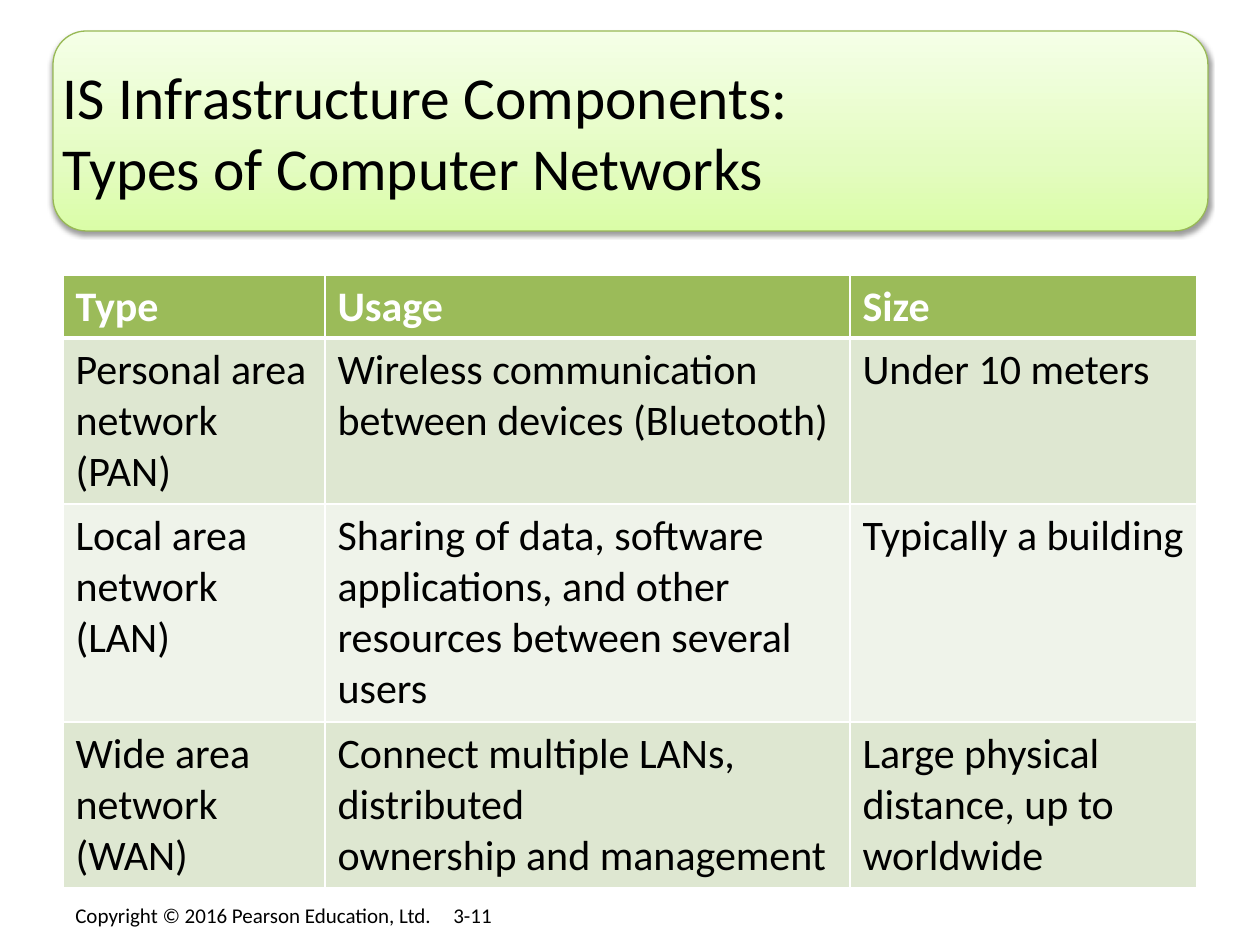
import pptx
import pptx.dml.color
import pptx.enum.shapes
import pptx.enum.text
import pptx.oxml
import pptx.oxml.ns
import pptx.util

PX = 914400 // 126
FONT = "Calibri"
NAMESPACE = pptx.oxml.ns.nsdecls("a")

TITLE = "IS Infrastructure Components:\vTypes of Computer Networks"
FOOTER = "Copyright © 2016 Pearson Education, Ltd.\t3-11"
NETWORKS = [
    ("Type", "Usage", "Size"),
    ("Personal area network (PAN)",
     "Wireless communication between devices (Bluetooth)",
     "Under 10 meters"),
    ("Local area network (LAN)",
     "Sharing of data, software\napplications, and other resources between several users",
     "Typically a building"),
    ("Wide area network (WAN)",
     "Connect multiple LANs, distributed\nownership and management",
     "Large physical distance, up to worldwide"),
]
COLUMN_WIDTHS = [262, 525, 347]
ROW_HEIGHTS = [63, 166, 218, 166]
HEADER_FILL = "9BBB59"
BAND_FILLS = ["DEE7D1", "EFF3EA"]
BANNER_STOPS = [(0, "DAFDA7"), (35, "E4FCC2"), (100, "F5FFE7")]


def px(*lengths):
    return [length * PX for length in lengths]


def color(value):
    return pptx.dml.color.RGBColor.from_string(value)


def set_text(frame, text, size, ink="000000", **extra):
    frame.text = text
    values = {"name": FONT, "size": pptx.util.Pt(size), **extra}
    for para in frame.paragraphs:
        for span in para.runs:
            for key, value in values.items():
                setattr(span.font, key, value)
            span.font.color.rgb = color(ink)


def add_text(page, place, text, size, **layout):
    box = page.shapes.add_textbox(*px(*place))
    frame = box.text_frame
    for key, value in {"word_wrap": True, **layout}.items():
        setattr(frame, key, value)
    set_text(frame, text, size)
    return frame


def add_banner(page, place):
    kind = pptx.enum.shapes.MSO_SHAPE.ROUNDED_RECTANGLE
    banner = page.shapes.add_shape(kind, *px(*place))
    banner.line.color.rgb = color("98B955")
    banner.line.width = pptx.util.Pt(0.75)
    banner.shadow.inherit = False
    stops = "".join(
        f'<a:gs pos="{spot * 1000}"><a:srgbClr val="{tint}"/></a:gs>'
        for spot, tint in BANNER_STOPS)
    properties = banner.element.spPr
    properties.find(pptx.oxml.ns.qn("a:prstGeom")).addnext(pptx.oxml.parse_xml(
        f'<a:gradFill {NAMESPACE} rotWithShape="1"><a:gsLst>{stops}</a:gsLst>'
        '<a:lin ang="16200000" scaled="0"/></a:gradFill>'))
    properties.find(pptx.oxml.ns.qn("a:effectLst")).append(pptx.oxml.parse_xml(
        f'<a:outerShdw {NAMESPACE} blurRad="39400" dist="20300" dir="5400000" '
        'rotWithShape="0"><a:srgbClr val="000000"><a:alpha val="38000"/>'
        '</a:srgbClr></a:outerShdw>'))


def set_borders(cell, widths):
    properties = cell._tc.get_or_add_tcPr()
    for index, (side, points) in enumerate(widths.items()):
        properties.insert(index, pptx.oxml.parse_xml(
            f'<a:ln{side} {NAMESPACE} w="{pptx.util.Pt(points)}"><a:solidFill>'
            f'<a:srgbClr val="FFFFFF"/></a:solidFill></a:ln{side}>'))


def add_network_table(page, left, top):
    place = px(left, top, sum(COLUMN_WIDTHS), sum(ROW_HEIGHTS))
    table = page.shapes.add_table(len(NETWORKS), len(COLUMN_WIDTHS), *place).table
    for column, width in zip(table.columns, px(*COLUMN_WIDTHS)):
        column.width = width
    for row, height in zip(table.rows, px(*ROW_HEIGHTS)):
        row.height = height
    for row, entries in enumerate(NETWORKS):
        header = row == 0
        fill = HEADER_FILL if header else BAND_FILLS[(row - 1) % 2]
        ink = "FFFFFF" if header else "000000"
        borders = {"L": 1, "R": 1, "T": 3 if row == 1 else 1, "B": 3 if header else 1}
        for column, text in enumerate(entries):
            cell = table.cell(row, column)
            cell.fill.solid()
            cell.fill.fore_color.rgb = color(fill)
            set_text(cell.text_frame, text, 24, ink, bold=header)
            set_borders(cell, borders)


def main():
    deck = pptx.Presentation()
    deck.slide_width, deck.slide_height = px(1260, 945)
    page = deck.slides.add_slide(deck.slide_layouts[6])
    footer = add_text(page, (63, 896, 1134, 38), FOOTER, 12)
    footer.paragraphs[0]._p.get_or_add_pPr().append(pptx.oxml.parse_xml(
        f'<a:tabLst {NAMESPACE}><a:tab pos="{378 * PX}" algn="l"/></a:tabLst>'))
    add_banner(page, (53, 31, 1155, 200))
    add_text(page, (63, 42, 1134, 179), TITLE, 34,
             margin_left=0, margin_right=0, margin_top=0, margin_bottom=0,
             vertical_anchor=pptx.enum.text.MSO_ANCHOR.MIDDLE)
    add_network_table(page, 63, 275)
    deck.save("out.pptx")


if __name__ == "__main__":
    main()
